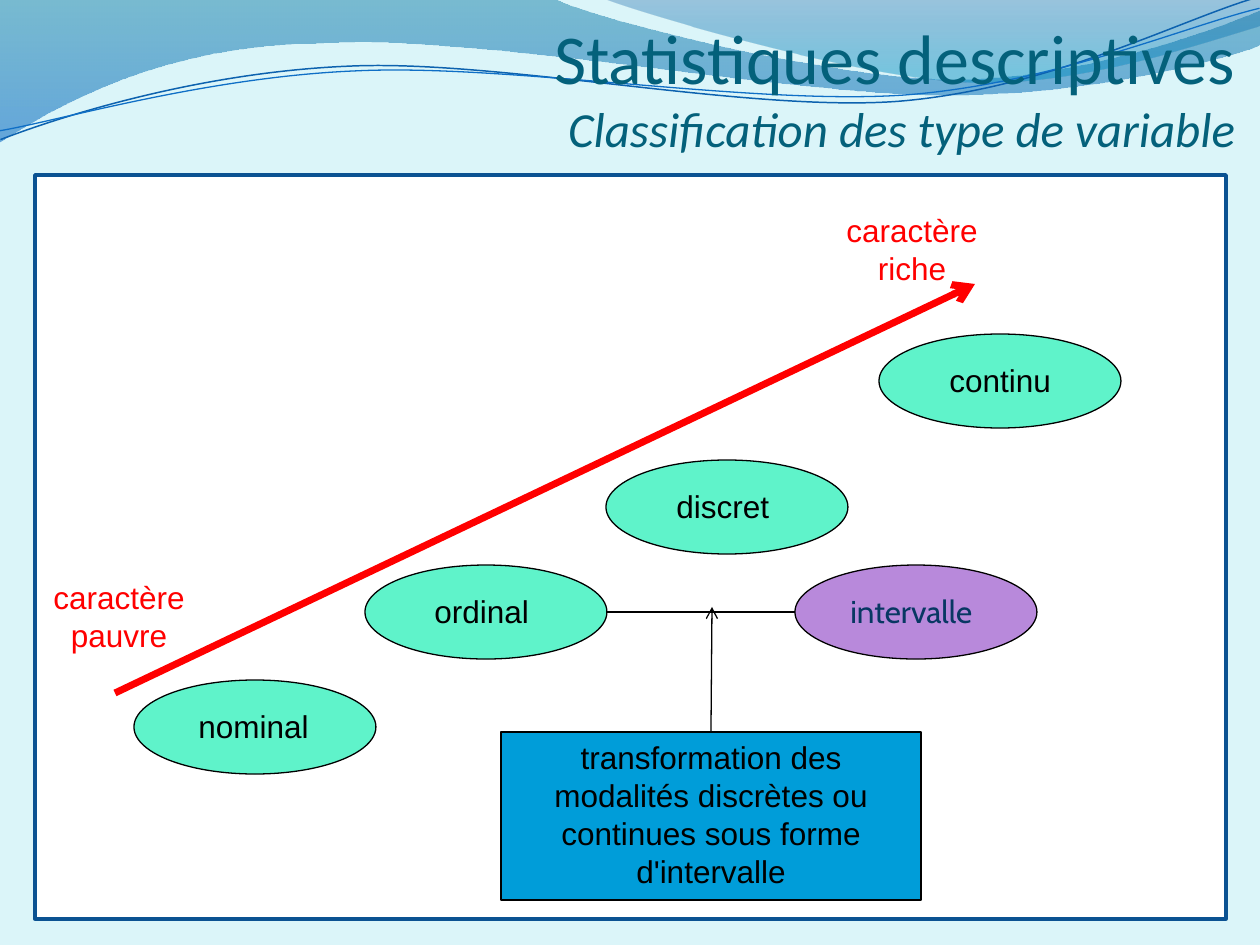
import pptx
import pptx.dml.color
import pptx.enum.shapes
import pptx.enum.text
import pptx.oxml
import pptx.oxml.ns
import pptx.util

EMU_PER_PX = 914400 / 126
COLORS = {
    "background": "DBF5F9", "panel": "FFFFFF", "frame": "0B5292", "title": "04617B",
    "green": "5FF3CA", "purple": "B889DB", "blue": "009DD9", "navy": "083763",
    "red": "FF0000", "black": "000000", "wave_dark": "0D62AF", "wave_light": "0F6FC6",
}
ALIGN = pptx.enum.text.PP_ALIGN
ANCHOR = pptx.enum.text.MSO_ANCHOR
SHAPE = pptx.enum.shapes.MSO_SHAPE
NS = pptx.oxml.ns.nsdecls("a")


def px(n):
    return pptx.util.Emu(round(n * EMU_PER_PX))


def rgb(name):
    return pptx.dml.color.RGBColor.from_string(COLORS[name])


def add_run(p, text, font="Arial", size=18, color="black", italic=False):
    r = p.add_run()
    r.text = text
    r.font.name, r.font.size, r.font.italic = font, pptx.util.Pt(size), italic
    r.font.color.rgb = rgb(color)


class Slide:
    def __init__(self, prs):
        self.s = prs.slides.add_slide(prs.slide_layouts[5])
        self.shapes = self.s.shapes
        self.s.background.fill.solid()
        self.s.background.fill.fore_color.rgb = rgb("background")

    def outline(self, sp, color, width):
        sp.line.color.rgb = rgb(color)
        sp.line.width = pptx.util.Pt(width)

    def freeform(self, start, segments, close):
        """Segments of 2 numbers are line ends, those of 6 are cubic Béziers."""
        builder = self.shapes.build_freeform(*map(px, start), scale=1.0)
        builder.add_line_segments(
            [(px(seg[i]), px(seg[i + 1])) for seg in segments
             for i in range(0, len(seg), 2)], close=close)
        sp = builder.convert_to_shape()
        sp.shadow.inherit = False
        sp.fill.background()
        lines = iter(list(sp._element.iter(pptx.oxml.ns.qn("a:lnTo"))))
        for seg in segments:
            nodes = [next(lines) for _ in range(len(seg) // 2)]
            if len(nodes) == 3:
                curve = pptx.oxml.parse_xml(f"<a:cubicBezTo {NS}/>")
                nodes[0].addprevious(curve)
                for node in nodes:
                    curve.append(node[0])
                    node.getparent().remove(node)
        return sp

    def wave(self, start, segments, stops):
        """Closed band with a translucent vertical gradient."""
        sp = self.freeform(start, segments, True)
        sp.line.fill.background()
        gs = "".join(f'<a:gs pos="{pos}000"><a:srgbClr val="{color}">'
                     f'<a:alpha val="{alpha}000"/></a:srgbClr></a:gs>'
                     for pos, color, alpha in stops)
        grad = pptx.oxml.parse_xml(f'<a:gradFill {NS}><a:gsLst>{gs}</a:gsLst>'
                                   '<a:lin ang="5400000" scaled="0"/></a:gradFill>')
        sp_pr = sp._element.spPr
        sp_pr.replace(sp_pr.find(pptx.oxml.ns.qn("a:noFill")), grad)

    def wave_line(self, start, segments, color, width):
        sp = self.freeform(start, segments, False)
        sp.rotation = 357.3
        self.outline(sp, color, width)

    def title(self, x, y, w, h, heading, subtitle):
        sp = self.shapes.title
        sp.left, sp.top, sp.width, sp.height = map(px, (x, y, w, h))
        tf = sp.text_frame
        tf.auto_size = pptx.enum.text.MSO_AUTO_SIZE.NONE
        tf.vertical_anchor = ANCHOR.BOTTOM
        tf.margin_left = tf.margin_right = tf.margin_bottom = 0
        p = tf.paragraphs[0]
        p.alignment = ALIGN.RIGHT
        add_run(p, heading, font="Calibri", size=40, color="title")
        p.add_line_break()
        add_run(p, subtitle, font="Calibri", size=28, color="title", italic=True)
        self.shapes._spTree.append(sp._element)  # in front of the waves

    def shape(self, kind, x, y, w, h, fill, line="black", width=0.75):
        sp = self.shapes.add_shape(kind, *map(px, (x, y, w, h)))
        sp.shadow.inherit = False
        sp.fill.solid()
        sp.fill.fore_color.rgb = rgb(fill)
        self.outline(sp, line, width)
        return sp

    def box(self, x, y, w, h, text, fill):
        tf = self.shape(SHAPE.RECTANGLE, x, y, w, h, fill).text_frame
        tf.word_wrap = True
        tf.vertical_anchor = ANCHOR.TOP
        p = tf.paragraphs[0]
        p.alignment = ALIGN.CENTER
        add_run(p, text)

    def label(self, x, y, w, h, text, align=ALIGN.CENTER, wrap=True, **fmt):
        tf = self.shapes.add_textbox(*map(px, (x, y, w, h))).text_frame
        tf.word_wrap = wrap
        tf.auto_size = pptx.enum.text.MSO_AUTO_SIZE.SHAPE_TO_FIT_TEXT
        p = tf.paragraphs[0]
        p.alignment = align
        add_run(p, text, **fmt)

    def bubble(self, x, y, text, text_x, text_w, fill="green", **fmt):
        self.shape(SHAPE.OVAL, x, y, 242, 94, fill)
        self.label(text_x, y + 21, text_w, 50, text, ALIGN.LEFT, False, **fmt)

    def line(self, x1, y1, x2, y2, color="black", width=0.75, arrow=False):
        c = self.shapes.add_connector(pptx.enum.shapes.MSO_CONNECTOR.STRAIGHT,
                                      *map(px, (x1, y1, x2, y2)))
        self.outline(c, color, width)
        if arrow:
            c.line._get_or_add_ln().append(
                pptx.oxml.parse_xml(f'<a:tailEnd {NS} type="arrow"/>'))
        c._element.spPr.append(pptx.oxml.parse_xml(f"<a:effectLst {NS}/>"))


def main():
    prs = pptx.Presentation()
    prs.slide_width, prs.slide_height = px(1260), px(945)
    slide = Slide(prs)

    slide.wave((0, -1), [
        (554, -1), (600, 21, 837, 79, 955, 79), (1075, 79, 1207, 33, 1260, 11),
        (1261, 45), (1239, 55, 1096, 96, 940, 95), (784, 94, 481, 35, 324, 43),
        (163, 44, 58, 105, -1, 142)],
        [(0, "0074A1", 45), (100, "0065C1", 55)])
    slide.wave((604, -1), [
        (641, 14, 859, 78, 969, 82), (1079, 87, 1211, 40, 1260, 26), (1260, 0)],
        [(0, "00539E", 30), (80, "008BBF", 45)])
    slide.wave_line((-2, 110), [
        (58, 90, 199, 52, 350, 53), (499, 53, 745, 118, 896, 114),
        (1049, 109, 1184, 45, 1260, 27)], "wave_dark", 0.85)
    slide.wave_line((-2, 101), [
        (57, 94, 207, 57, 357, 58), (509, 58, 750, 111, 902, 108),
        (1052, 104, 1188, 52, 1262, 38)], "wave_light", 0.75)

    slide.shape(SHAPE.RECTANGLE, 35, 175, 1191, 744, "panel", "frame", 2)
    slide.title(193, 0, 1042, 157, "Statistiques descriptives",
                "Classification des type de variable")

    for x, y, text, text_x, text_w in [
            (134, 680, "nominal", 186, 136), (365, 565, "ordinal", 422, 121),
            (606, 460, "discret", 664, 118), (879, 334, "continu", 937, 129)]:
        slide.bubble(x, y, text, text_x, text_w)
    slide.bubble(795, 565, "intervalle", 838, 152, "purple", font="Cabin", color="navy")

    slide.line(115, 693, 975, 284, "red", 4, arrow=True)
    for x, y, text in [(35, 572, "caractère pauvre"), (828, 205, "caractère riche")]:
        slide.label(x, y, 168, 89, text, color="red")

    slide.box(501, 732, 420, 168, "transformation des modalités discrètes ou "
              "continues sous forme d'intervalle", "blue")
    slide.line(711, 733, 712, 607, arrow=True)
    slide.line(606, 612, 795, 612)
    prs.save("out.pptx")


if __name__ == "__main__":
    main()
